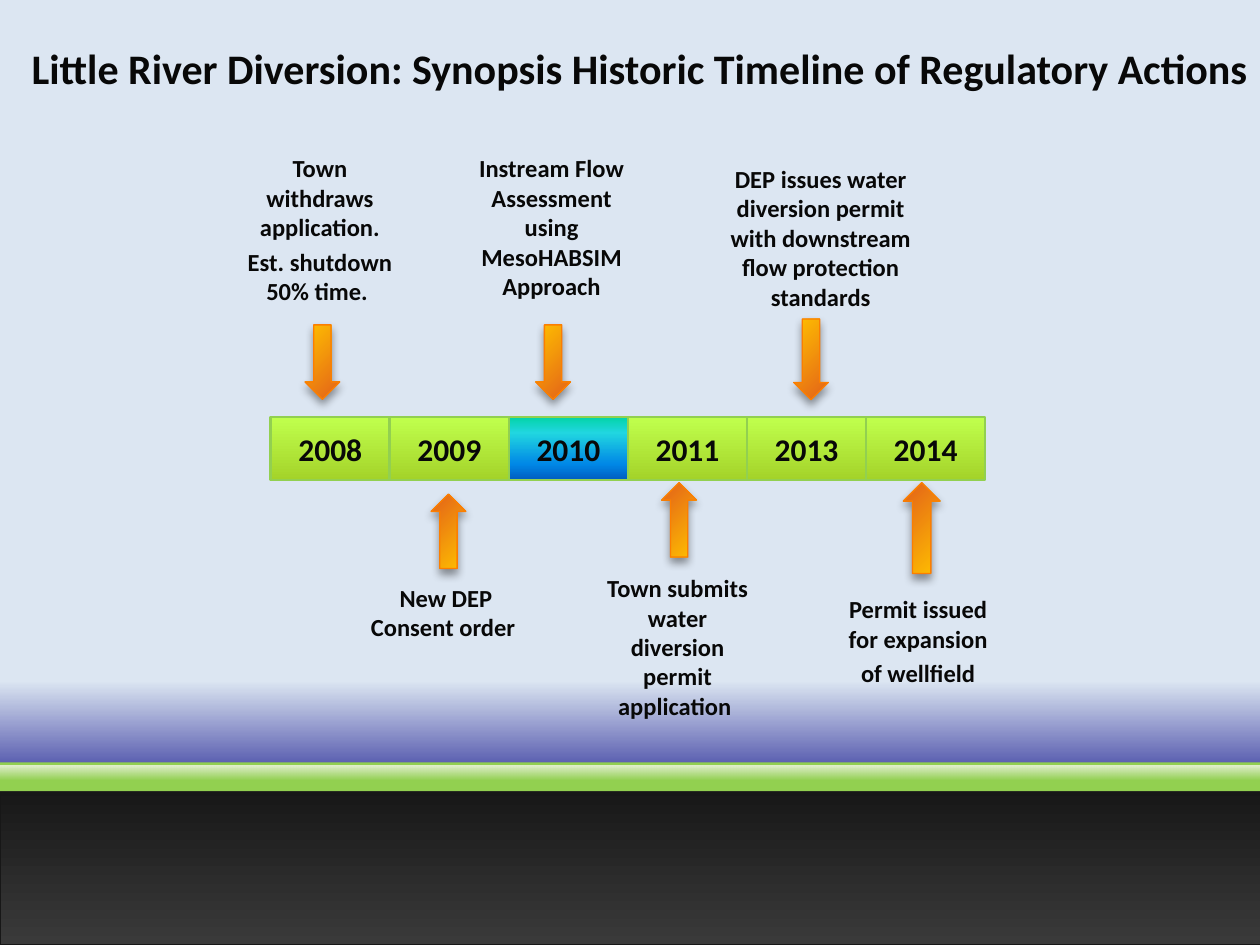
from lxml import etree
from pptx import Presentation
from pptx.dml.color import RGBColor
from pptx.enum.shapes import MSO_SHAPE
from pptx.enum.text import MSO_ANCHOR, PP_ALIGN
from pptx.oxml.ns import qn
from pptx.util import Cm, Pt

RECTANGLE, DOWN_ARROW = MSO_SHAPE.RECTANGLE, MSO_SHAPE.DOWN_ARROW
TOP, MIDDLE = MSO_ANCHOR.TOP, MSO_ANCHOR.MIDDLE
LEFT, CENTER = PP_ALIGN.LEFT, PP_ALIGN.CENTER

INK = RGBColor(0x08, 0x08, 0x08)
CHARCOAL = RGBColor(0x17, 0x17, 0x17)
GRAPHITE = RGBColor(0x3A, 0x3A, 0x3A)
GREEN = RGBColor(0x92, 0xD0, 0x50)
ORANGE = RGBColor(0xFC, 0x7E, 0x00)
BLACK = RGBColor(0, 0, 0)

SKY = [(72, RGBColor(0xDC, 0xE6, 0xF2)), (87, RGBColor(0x00, 0x00, 0x82)),
       (100, RGBColor(0x00, 0x47, 0xFF))]
LIME = [(0, RGBColor(0xC0, 0xFF, 0x4D)), (100, RGBColor(0xA4, 0xD3, 0x29))]
OCEAN = [(0, RGBColor(0x03, 0xD4, 0xA8)), (25, RGBColor(0x21, 0xD6, 0xE0)),
         (75, RGBColor(0x00, 0x87, 0xE6)), (100, RGBColor(0x00, 0x5C, 0xBF))]
AMBER = [(0, RGBColor(0xFF, 0xC0, 0x00)), (100, RGBColor(0xE3, 0x61, 0x19))]
GROUND = [(0, CHARCOAL), (100, GRAPHITE)]
GLOSS = [(0, RGBColor(0xF3, 0xF3, 0xF3), 0), (100, RGBColor(0xFF, 0xFC, 0xF9), 79)]

TITLE = "Little River Diversion: Synopsis Historic Timeline of Regulatory Actions"
YEARS = ["2008", "2009", "2010", "2011", "2013", "2014"]
HIGHLIGHT = "2010"
YEAR_LEFT, YEAR_TOP, YEAR_WIDTH, YEAR_HEIGHT = 5.46, 8.41, 2.4, 1.27

EVENTS = [
    (["Town withdraws application.", "Est. shutdown 50% time. "], (4.65, 2.97, 3.6, 3.38)),
    (["New DEP Consent order "], (7.19, 11.63, 3.6, 1.45)),
    (["Instream Flow Assessment using MesoHABSIM Approach"], (9.32, 2.97, 3.6, 3.25)),
    (["Town submits water diversion permit application "], (11.86, 11.43, 3.6, 3.25)),
    (["DEP issues water diversion permit with downstream flow protection standards"],
     (14.4, 3.18, 4.29, 3.25)),
    (["Permit issued for expansion", "of wellfield"], (16.71, 11.86, 3.6, 2.16)),
]
DOWN_ARROWS = [(6.15, 6.55, 0.7, 1.5), (10.8, 6.55, 0.7, 1.5), (16, 6.43, 0.7, 1.63)]
UP_ARROWS = [(8.69, 9.96, 0.7, 1.5), (13.34, 9.73, 0.7, 1.5), (18.21, 9.73, 0.74, 1.83)]


def add_color(parent, color, opacity):
    node = etree.SubElement(parent, qn("a:srgbClr"), val=str(color))
    if opacity < 100:
        etree.SubElement(node, qn("a:alpha"), val=str(opacity * 1000))


def set_gradient(fill, owner, stops, angle):
    fill.gradient()
    gradient = owner._element.find(".//" + qn("a:gradFill"))
    for child in list(gradient):
        gradient.remove(child)
    stop_list = etree.SubElement(gradient, qn("a:gsLst"))
    for position, color, *opacity in stops:
        stop = etree.SubElement(stop_list, qn("a:gs"), pos=str(position * 1000))
        add_color(stop, color, opacity[0] if opacity else 100)
    etree.SubElement(gradient, qn("a:lin"), ang=str(angle * 60000), scaled="0")


def add_figure(slide, preset, place, stops=None, angle=90, color=None, line=None, weight=0.75):
    figure = slide.shapes.add_shape(preset, *map(Cm, place))
    figure.shadow.inherit = False
    if stops:
        set_gradient(figure.fill, figure, stops, angle)
    else:
        figure.fill.solid()
        figure.fill.fore_color.rgb = color
    if line is None:
        figure.line.fill.background()
    else:
        figure.line.color.rgb = line
        figure.line.width = Pt(weight)
    return figure


def add_arrow(slide, place, rotation):
    arrow = add_figure(slide, DOWN_ARROW, place, AMBER, 45, line=ORANGE)
    arrow.rotation = rotation
    effects = arrow._element.spPr.find(qn("a:effectLst"))
    shadow = etree.SubElement(effects, qn("a:outerShdw"), blurRad=str(Pt(5)),
                              dist=str(Pt(3)), dir=str(90 * 60000), rotWithShape="0")
    add_color(shadow, BLACK, 40)


def write(frame, paragraphs, size=14, align=CENTER, anchor=TOP, side_inset=0.25):
    frame.word_wrap = True
    frame.vertical_anchor = anchor
    frame.margin_left = frame.margin_right = Cm(side_inset)
    for index, text in enumerate(paragraphs):
        paragraph = frame.add_paragraph() if index else frame.paragraphs[0]
        paragraph.text = text
        paragraph.alignment = align
        if index:
            paragraph.space_before = Pt(size * 0.2)
        font = paragraph.font
        font.name, font.size, font.bold = "Calibri", Pt(size), True
        font.color.rgb = INK


def add_label(slide, paragraphs, place, **style):
    write(slide.shapes.add_textbox(*map(Cm, place)).text_frame, paragraphs, **style)


def main():
    deck = Presentation()
    deck.slide_width, deck.slide_height = Cm(25.4), Cm(19.05)
    slide = deck.slides.add_slide(deck.slide_layouts[6])
    set_gradient(slide.background.fill, slide, SKY, 90)

    for index, year in enumerate(YEARS):
        place = (YEAR_LEFT + index * YEAR_WIDTH, YEAR_TOP, YEAR_WIDTH, YEAR_HEIGHT)
        cell = add_figure(slide, RECTANGLE, place, OCEAN if year == HIGHLIGHT else LIME,
                          line=GREEN, weight=1.5)
        write(cell.text_frame, [year], size=18, anchor=MIDDLE)

    for rotation, places in ((0, DOWN_ARROWS), (180, UP_ARROWS)):
        for place in places:
            add_arrow(slide, place, rotation)

    add_figure(slide, RECTANGLE, (0, 15.88, 25.63, 3.17), GROUND, line=CHARCOAL)
    add_figure(slide, RECTANGLE, (-0.1, 15.37, 25.83, 0.58), color=GREEN)
    add_figure(slide, RECTANGLE, (-0.1, 15.44, 25.83, 0.28), GLOSS, 270)

    add_label(slide, [TITLE], (0.64, 0.53, 24.76, 1.68),
              size=24, align=LEFT, anchor=MIDDLE, side_inset=0)
    for paragraphs, place in EVENTS:
        add_label(slide, paragraphs, place)

    deck.save("out.pptx")


if __name__ == "__main__":
    main()
